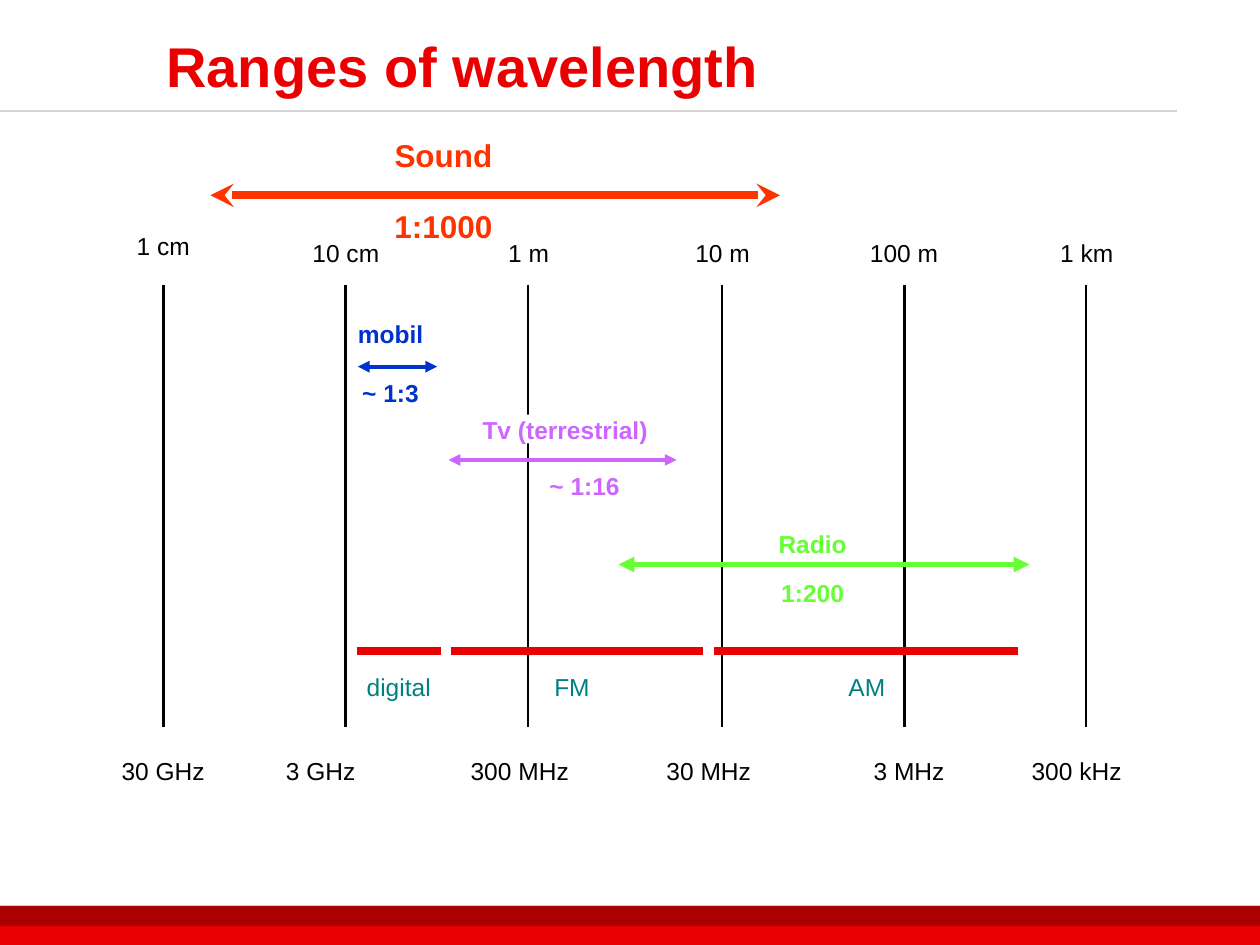
from typing import NamedTuple, Optional

from lxml import etree
from pptx import Presentation
from pptx import util as u
from pptx.dml.color import RGBColor
from pptx.enum import shapes, text
from pptx.oxml import ns

Inches = u.Inches
BLACK = RGBColor(0, 0, 0)
WHITE = RGBColor(255, 255, 255)
RED = RGBColor(0xEA, 0, 0)
DARK_RED = RGBColor(0xAA, 0, 0)
GRAY = RGBColor(0xD4, 0xD4, 0xD4)
BLUE = RGBColor(0, 0x33, 0xCC)
VIOLET = RGBColor(0xCC, 0x66, 0xFF)
GREEN = RGBColor(0x66, 0xFF, 0x33)
ORANGE = RGBColor(0xFF, 0x33, 0)
TEAL = RGBColor(0, 0x80, 0x80)


class ScaleMark(NamedTuple):
    x: float
    wavelength: str
    wavelength_left: float
    wavelength_top: float
    frequency: str
    frequency_left: float


class Range(NamedTuple):
    """A service's span of wavelengths, with its name above and ratio below."""
    start: float
    end: float
    y: float
    color: RGBColor
    weight: float
    name: str
    name_left: float
    name_top: float
    name_width: float
    ratio: str
    ratio_left: float
    ratio_top: float
    ratio_width: float
    size: int = 14
    arrow: str = "triangle"
    name_fill: Optional[RGBColor] = None


class Band(NamedTuple):
    start: float
    end: float
    name: str
    name_left: float
    name_width: float


SCALE = [
    ScaleMark(1.3, "1 cm", 0.75, 1.83, "30 GHz", 0.75),
    ScaleMark(2.74, "10 cm", 2.2, 1.89, "3 GHz", 2),
    ScaleMark(4.19, "1 m", 3.65, 1.89, "300 MHz", 3.58),
    ScaleMark(5.73, "10 m", 5.19, 1.89, "30 MHz", 5.08),
    ScaleMark(7.18, "100 m", 6.63, 1.89, "3 MHz", 6.67),
    ScaleMark(8.62, "1 km", 8.08, 1.89, "300 kHz", 8),
]
RANGES = [
    Range(2.84, 3.47, 2.91, BLUE, 2.25, "mobil", 2.65, 2.53, 0.9,
          "~ 1:3", 2.65, 3, 0.9),
    Range(3.56, 5.37, 3.65, VIOLET, 2.25, "Tv (terrestrial)", 3.79, 3.29, 1.39,
          "~ 1:16", 4.19, 3.74, 0.9, name_fill=WHITE),
    Range(4.91, 8.17, 4.48, GREEN, 3, "Radio", 6, 4.2, 0.9,
          "1:200", 6, 4.59, 0.9),
    Range(1.67, 6.19, 1.55, ORANGE, 4.5, "Sound", 2.93, 1.08, 1.18,
          "1:1000", 2.93, 1.64, 1.18, size=18, arrow="stealth"),
]
BANDS = [
    Band(2.83, 3.5, "digital", 2.83, 0.67),
    Band(3.58, 5.58, "FM", 4.33, 0.42),
    Band(5.67, 8.08, "AM", 6.67, 0.42),
]


def add_bar(slide, top: float, height: float, color: RGBColor) -> None:
    bar = slide.shapes.add_shape(shapes.MSO_SHAPE.RECTANGLE, 0, Inches(top),
                                 Inches(10), Inches(height))
    bar.shadow.inherit = False
    bar.fill.solid()
    bar.fill.fore_color.rgb = color
    bar.line.fill.background()


def add_line(slide, start: tuple[float, float], end: tuple[float, float],
             color: RGBColor, weight: float, arrow: Optional[str] = None) -> None:
    """Draw a straight line, with the given arrowhead at both ends."""
    line = slide.shapes.add_connector(shapes.MSO_CONNECTOR.STRAIGHT,
                                      *map(Inches, start + end))
    line.line.color.rgb = color
    line.line.width = u.Pt(weight)
    if arrow:
        outline = line.line._get_or_add_ln()
        for tag in ("a:headEnd", "a:tailEnd"):
            etree.SubElement(outline, ns.qn(tag), type=arrow)
    etree.SubElement(line._element.spPr, ns.qn("a:effectLst"))


def format_text(frame, content: str, *, size: int, color: RGBColor,
                bold: bool = False) -> None:
    frame.text = content
    font = frame.paragraphs[0].runs[0].font
    font.name = "Arial"
    font.size = u.Pt(size)
    font.bold = bold
    font.color.rgb = color


def add_label(slide, content: str, left: float, top: float, width: float, *,
              color: RGBColor = BLACK, size: int = 14, bold: bool = False,
              fill: Optional[RGBColor] = None) -> None:
    height = 0.3 if size > 14 else 0.23
    label = slide.shapes.add_textbox(*map(Inches, (left, top, width, height)))
    frame = label.text_frame
    frame.word_wrap = True
    frame.margin_left = frame.margin_right = 0
    frame.margin_top = frame.margin_bottom = 0
    format_text(frame, content, size=size, color=color, bold=bold)
    frame.paragraphs[0].alignment = text.PP_ALIGN.CENTER
    if fill is not None:
        label.fill.solid()
        label.fill.fore_color.rgb = fill


def add_title(slide, content: str) -> None:
    title = slide.shapes.title
    title.left, title.top = Inches(1.22), Inches(0.08)
    title.width, title.height = Inches(8.74), Inches(0.87)
    frame = title.text_frame
    frame.vertical_anchor = text.MSO_ANCHOR.MIDDLE
    format_text(frame, content, size=32, color=RED, bold=True)
    frame.paragraphs[0].alignment = text.PP_ALIGN.LEFT


def add_range(slide, item: Range) -> None:
    add_line(slide, (item.start, item.y), (item.end, item.y), item.color,
             item.weight, item.arrow)
    add_label(slide, item.name, item.name_left, item.name_top, item.name_width,
              color=item.color, size=item.size, bold=True, fill=item.name_fill)
    add_label(slide, item.ratio, item.ratio_left, item.ratio_top,
              item.ratio_width, color=item.color, size=item.size, bold=True)


def main() -> None:
    presentation = Presentation()
    presentation.slide_width, presentation.slide_height = Inches(10), Inches(7.5)
    slide = presentation.slides.add_slide(presentation.slide_layouts[5])

    add_bar(slide, 7.19, 0.31, RED)
    add_bar(slide, 7.19, 0.16, DARK_RED)
    add_line(slide, (0, 0.88), (9.34, 0.88), GRAY, 1.5)
    add_title(slide, "Ranges of wavelength")

    for mark in SCALE:
        add_line(slide, (mark.x, 2.26), (mark.x, 5.77), BLACK, 1.5)
        add_label(slide, mark.wavelength, mark.wavelength_left,
                  mark.wavelength_top, 1.09)
        add_label(slide, mark.frequency, mark.frequency_left, 6, 1.09)
    for item in RANGES:
        add_range(slide, item)
    for band in BANDS:
        add_line(slide, (band.start, 5.17), (band.end, 5.17), RED, 4.5)
        add_label(slide, band.name, band.name_left, 5.33, band.name_width,
                  color=TEAL)

    presentation.save("out.pptx")


if __name__ == "__main__":
    main()
